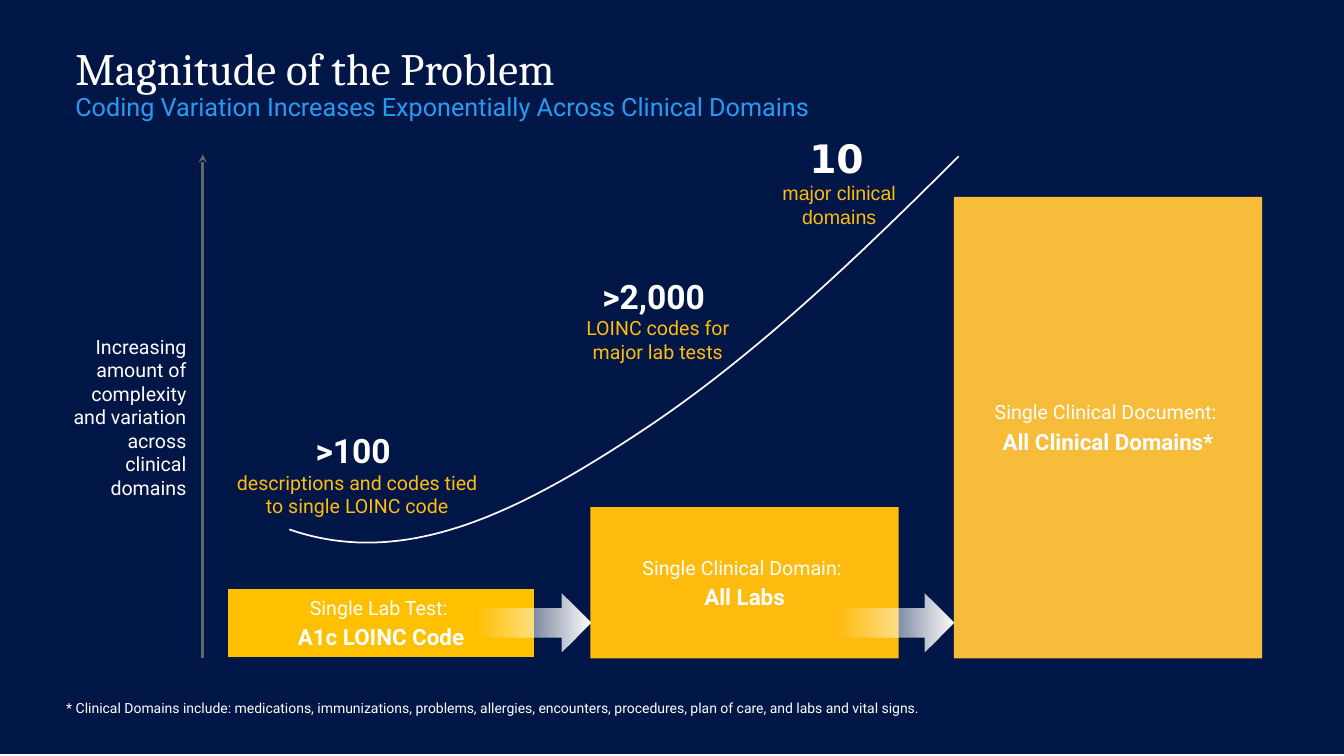
from lxml import etree
from pptx import Presentation
from pptx.dml.color import RGBColor
from pptx.enum.shapes import MSO_CONNECTOR, MSO_SHAPE
from pptx.enum.text import MSO_ANCHOR, PP_ALIGN
from pptx.oxml.ns import qn
from pptx.util import Cm, Pt

LEFT, CENTER, RIGHT = PP_ALIGN.LEFT, PP_ALIGN.CENTER, PP_ALIGN.RIGHT
TOP, MIDDLE, BOTTOM = MSO_ANCHOR.TOP, MSO_ANCHOR.MIDDLE, MSO_ANCHOR.BOTTOM
RECTANGLE, RIGHT_ARROW = MSO_SHAPE.RECTANGLE, MSO_SHAPE.RIGHT_ARROW
STRAIGHT = MSO_CONNECTOR.STRAIGHT

NAVY, WHITE, AMBER, BLUE = "001646", "FFFFFF", "FFBC0F", "249CF4"
BAR_LEFT, BAR_PITCH, BAR_WIDTH, BASELINE = 5.72, 9.16, 7.77, 16.59
ARROW_TOP, ARROW_WIDTH, ARROW_HEIGHT = 14.96, 2.9, 1.47

BARS = [  # height, fill, caption, name
    (1.78, "FFC000", "Single Lab Test: ", "A1c LOINC Code"),
    (3.81, AMBER, "Single Clinical Domain: ", "All Labs"),
    (11.63, "F8BC3B", "Single Clinical Document: ", "All Clinical Domains*"),
]
CURVE_SEGMENTS = [
    [(24.16, 3.94), (21.69, 6.4), (18.95, 9.07), (15.93, 11.02)],
    [(15.93, 11.02), (12.93, 12.98), (10.13, 14.33), (7.29, 13.34)],
]


def color(value):
    return RGBColor.from_string(value)


def add_span(para, text, size=14, font="Roboto", fill=WHITE, bold=False):
    span = para.add_run()
    span.text = text
    span.font.size = Pt(size)
    span.font.name = font
    span.font.bold = bold
    span.font.color.rgb = color(fill)


def fill_frame(frame, paragraphs, align=LEFT, anchor=TOP, after=0):
    """Write paragraphs, each a list of (text, format) spans."""
    frame.word_wrap = True
    frame.vertical_anchor = anchor
    for index, spans in enumerate(paragraphs):
        para = frame.add_paragraph() if index else frame.paragraphs[0]
        para.alignment = align
        para.space_after = Pt(after)
        for text, style in spans:
            add_span(para, text, **style)


def add_text(page, bounds, paragraphs, inset=True, **layout):
    frame = page.shapes.add_textbox(*map(Cm, bounds)).text_frame
    if not inset:
        frame.margin_left = frame.margin_right = 0
        frame.margin_top = frame.margin_bottom = 0
    fill_frame(frame, paragraphs, **layout)


def add_block(page, bounds, fill, kind=RECTANGLE):
    block = page.shapes.add_shape(kind, *map(Cm, bounds))
    block.shadow.inherit = False
    block.fill.solid()
    block.fill.fore_color.rgb = color(fill)
    block.line.fill.background()
    return block


def add_bar(page, left, height, fill, caption, name):
    bar = add_block(page, (left, BASELINE - height, BAR_WIDTH, height), fill)
    paragraphs = [[(caption, {})], [(name, dict(size=16, bold=True))]]
    fill_frame(bar.text_frame, paragraphs, align=CENTER, anchor=MIDDLE, after=3)
    return bar


def add_fading_arrow(page, tip):
    """Add an arrow ending at tip that fades in from transparent to white."""
    bounds = (tip - ARROW_WIDTH, ARROW_TOP, ARROW_WIDTH, ARROW_HEIGHT)
    arrow = add_block(page, bounds, WHITE, RIGHT_ARROW)
    arrow.fill.gradient()
    arrow.fill.gradient_angle = 0
    for position, stop in enumerate(arrow.fill.gradient_stops):
        stop.position = position
        stop.color.rgb = color(WHITE)
    first = next(arrow._element.spPr.iter(qn("a:srgbClr")))
    etree.SubElement(first, qn("a:alpha"), val="0")


def add_axis(page, x, bottom, top):
    axis = page.shapes.add_connector(STRAIGHT, *map(Cm, (x, bottom, x, top)))
    axis.line.color.rgb = color("63666A")
    axis.line.width = Pt(2)
    etree.SubElement(axis.line._get_or_add_ln(), qn("a:tailEnd"), type="stealth")
    etree.SubElement(axis._element.spPr, qn("a:effectLst"))


def bezier_point(controls, t):
    weights = ((1 - t) ** 3, 3 * t * (1 - t) ** 2, 3 * t * t * (1 - t), t ** 3)
    return tuple(Cm(sum(w * c for w, c in zip(weights, axis)))
                 for axis in zip(*controls))


def add_curve(page, segments, steps=40):
    points = [bezier_point(controls, step / steps)
              for controls in segments for step in range(1, steps + 1)]
    builder = page.shapes.build_freeform(*bezier_point(segments[0], 0))
    builder.add_line_segments(points, close=False)
    curve = builder.convert_to_shape()
    curve.shadow.inherit = False
    curve.fill.background()
    curve.line.color.rgb = color("F9F9F9")
    curve.line.width = Pt(1.25)


def add_callout(page, bounds, number, label, font="Roboto"):
    add_text(page, bounds, [number, [(label, dict(font=font, fill=AMBER))]],
             align=CENTER)


def main():
    deck = Presentation()
    deck.slide_width, deck.slide_height = Cm(33.87), Cm(19.05)
    page = deck.slides.add_slide(deck.slide_layouts[6])

    add_block(page, (0, 0, 33.87, 19), NAVY)
    add_text(page, (1.9, 1.02, 26.31, 2.41),
             [[("Magnitude of the Problem", dict(size=32, font="Cambria"))]],
             inset=False)
    add_text(page, (1.9, 2.31, 31.83, 0.94),
             [[("Coding Variation Increases Exponentially Across Clinical Domains",
                dict(size=18, fill=BLUE))]], inset=False)

    lefts = [BAR_LEFT + BAR_PITCH * index for index in range(len(BARS))]
    bars = [add_bar(page, left, *bar) for left, bar in zip(lefts, BARS)]
    bars[0].line.color.rgb = color("001647")
    bars[0].line.width = Pt(2)
    for left in lefts[1:]:
        add_fading_arrow(page, left)

    big = dict(size=24, bold=True)
    add_callout(page, (5.59, 10.72, 6.83, 2.49), [(">100 ", big)],
                "descriptions and codes tied to single LOINC code")
    add_callout(page, (14, 6.83, 5.16, 2.49), [(">2,000 ", big)],
                "LOINC codes for major lab tests")
    add_callout(page, (18.57, 3.25, 5.16, 2.64),
                [("10", dict(size=28, font="DejaVu Sans", bold=True)),
                 (" ", dict(font="Arial"))],
                "major clinical domains", font="Arial")

    add_axis(page, 5.11, BASELINE, 3.89)
    add_text(page, (1.37, 8.31, 3.58, 3.84),
             [[("Increasing amount of complexity and variation across "
                "clinical domains", {})]], align=RIGHT)
    add_text(page, (1.42, 17.48, 25.91, 0.69),
             [[("* Clinical Domains include: medications, immunizations, "
                "problems, allergies, encounters, procedures, plan of care, "
                "and labs and vital signs.", dict(size=10))]], anchor=BOTTOM)
    add_curve(page, CURVE_SEGMENTS)

    deck.save("out.pptx")


if __name__ == "__main__":
    main()
